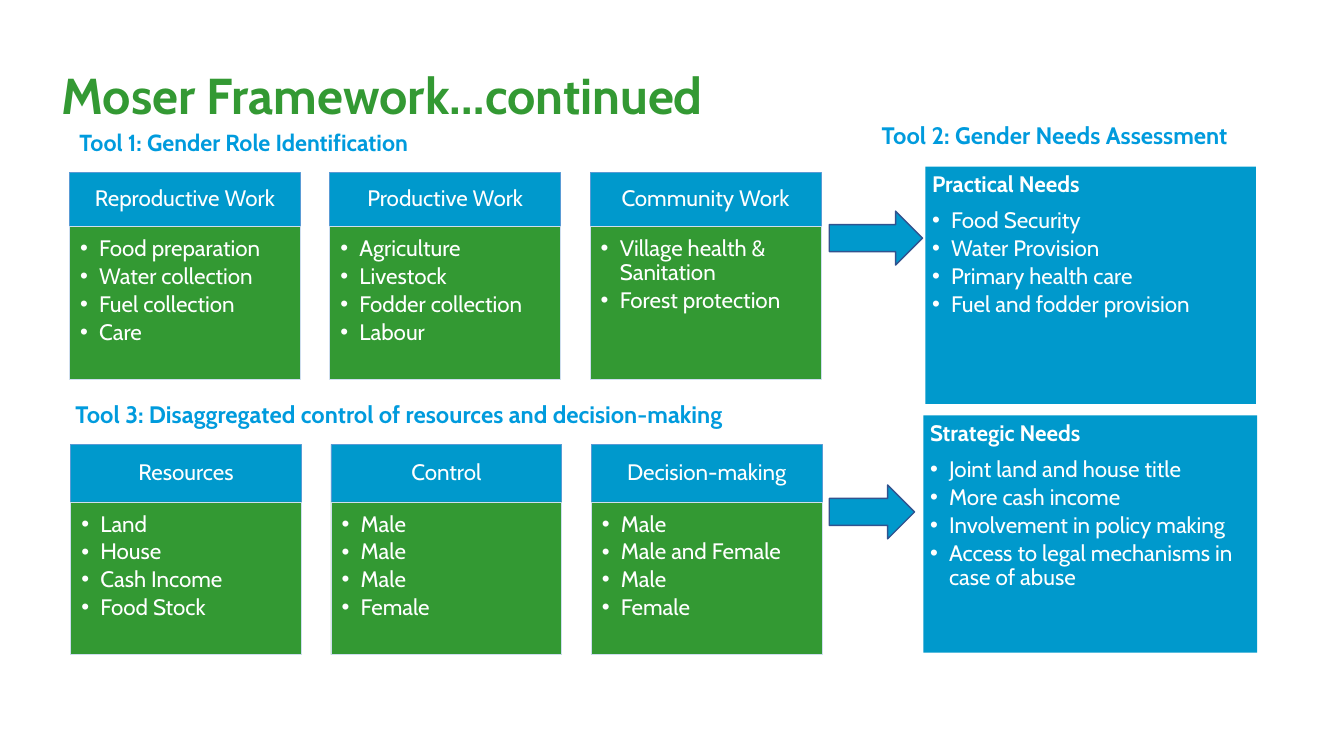
from dataclasses import dataclass

from lxml import etree
from pptx import Presentation
from pptx.dml.color import RGBColor
from pptx.enum.shapes import MSO_SHAPE
from pptx.enum.text import MSO_ANCHOR, PP_ALIGN
from pptx.oxml.ns import qn
from pptx.util import Cm, Pt

RECTANGLE = MSO_SHAPE.RECTANGLE
RIGHT_ARROW = MSO_SHAPE.RIGHT_ARROW
TOP, MIDDLE = MSO_ANCHOR.TOP, MSO_ANCHOR.MIDDLE
LEFT, CENTER = PP_ALIGN.LEFT, PP_ALIGN.CENTER


@dataclass(frozen=True)
class Theme:
    font: str = "Cabin"
    green: str = "339933"
    blue: str = "0099CC"
    heading: str = "009BDD"
    white: str = "FFFFFF"
    header_line: str = "599BD5"
    body_line: str = "CFDEEF"
    arrow_line: str = "31538F"
    title_size: float = 36
    tool_size: float = 17
    first_tool_size: float = 16.6
    text_size: float = 16


theme = Theme()


def write_text(shape, lines, size, color, insets, anchor=TOP, align=LEFT,
               spacing=0.9, bold_first=False, bullets_from=None):
    frame = shape.text_frame
    margins = dict(zip(("margin_left", "margin_top", "margin_right", "margin_bottom"), map(Cm, insets)))
    for name, value in {"word_wrap": True, "vertical_anchor": anchor, **margins}.items():
        setattr(frame, name, value)
    for index, line in enumerate(lines):
        paragraph = frame.paragraphs[0] if index == 0 else frame.add_paragraph()
        if bullets_from is not None and index >= bullets_from:
            properties = paragraph._p.get_or_add_pPr()
            properties.set("marL", str(Cm(0.48)))
            properties.set("indent", str(-Cm(0.48)))
            bullet_color = etree.SubElement(properties, qn("a:buClr"))
            etree.SubElement(bullet_color, qn("a:srgbClr"), val=color)
            etree.SubElement(properties, qn("a:buFont"), typeface="Arial")
            etree.SubElement(properties, qn("a:buChar"), char="•")
        if index:
            paragraph.space_before = Pt(8.4 if index == bullets_from else 2.7)
        paragraph.alignment = align
        paragraph.line_spacing = spacing
        run = paragraph.add_run()
        run.text = line
        font_format = {"name": theme.font, "size": Pt(size), "bold": bold_first and index == 0}
        for name, value in font_format.items():
            setattr(run.font, name, value)
        run.font.color.rgb = RGBColor.from_string(color)


def add_block(slide, kind, place, fill, line=None, line_width=0.5):
    shape = slide.shapes.add_shape(kind, *map(Cm, place))
    shape.shadow.inherit = False
    shape.fill.solid()
    shape.fill.fore_color.rgb = RGBColor.from_string(fill)
    if line:
        shape.line.color.rgb = RGBColor.from_string(line)
        shape.line.width = Pt(line_width)
    else:
        shape.line.fill.background()
    return shape


presentation = Presentation()
presentation.slide_width = Cm(33.87)
presentation.slide_height = Cm(19.05)
slide = presentation.slides.add_slide(presentation.slide_layouts[5])

box_insets = (0.25, 0.13, 0.25, 0.13)
title = slide.shapes.title
for name, value in {"left": 1.3, "top": 1.65, "width": 20.7, "height": 1.65}.items():
    setattr(title, name, Cm(value))
write_text(title, ["Moser Framework…continued"], theme.title_size, theme.green,
           box_insets, anchor=MIDDLE, bold_first=True)

tool_headings = [
    ("Tool 1: Gender Role Identification", (1.75, 3.25, 19.1, 0.84), theme.first_tool_size, 0.8),
    ("Tool 2: Gender Needs Assessment", (21.97, 2.9, 10.92, 1.19), theme.tool_size, 1.0),
    ("Tool 3: Disaggregated control of resources and decision-making",
     (1.65, 10.08, 19.35, 0.84), theme.tool_size, 0.8),
]
for text, place, size, spacing in tool_headings:
    heading = slide.shapes.add_textbox(*map(Cm, place))
    write_text(heading, [text], size, theme.heading, box_insets, spacing=spacing, bold_first=True)

column_width, column_pitch, body_height = 5.82, 6.56, 3.85
column_rows = [
    (1.75, 4.35, 1.36, [
        ("Reproductive Work", ["Food preparation", "Water collection", "Fuel collection", "Care"]),
        ("Productive Work", ["Agriculture", "Livestock", "Fodder collection", "Labour"]),
        ("Community Work", ["Village health & Sanitation", "Forest protection"]),
    ]),
    (1.78, 11.2, 1.45, [
        ("Resources", ["Land", "House", "Cash Income", "Food Stock"]),
        ("Control", ["Male", "Male", "Male", "Female"]),
        ("Decision-making", ["Male", "Male and Female", "Male", "Female"]),
    ]),
]
for row_left, row_top, header_height, columns in column_rows:
    for index, (header_text, items) in enumerate(columns):
        left = row_left + index * column_pitch
        header = add_block(slide, RECTANGLE, (left, row_top, column_width, header_height),
                           theme.blue, theme.header_line)
        write_text(header, [header_text], theme.text_size, theme.white,
                   (0.36, 0.2, 0.36, 0.2), anchor=MIDDLE, align=CENTER)
        body = add_block(slide, RECTANGLE, (left, row_top + header_height, column_width, body_height),
                         theme.green, theme.body_line)
        write_text(body, items, theme.text_size, theme.white,
                   (0.27, 0.27, 0.36, 0.41), bullets_from=0)

needs = [
    ((23.32, 4.2, 8.33, 5.98),
     ["Practical Needs", "Food Security", "Water Provision", "Primary health care",
      "Fuel and fodder provision"]),
    ((23.27, 10.47, 8.41, 5.98),
     ["Strategic Needs", "Joint land and house title", "More cash income",
      "Involvement in policy making", "Access to legal mechanisms in case of abuse"]),
]
for place, lines in needs:
    need = add_block(slide, RECTANGLE, place, theme.blue)
    write_text(need, lines, theme.text_size, theme.white, (0.17, 0.17, 0.17, 0.17),
               bold_first=True, bullets_from=1)

for top, width in ((5.32, 2.35), (12.22, 2.15)):
    add_block(slide, RIGHT_ARROW, (20.9, top, width, 1.36), theme.blue, theme.arrow_line, 1)

presentation.save("out.pptx")
